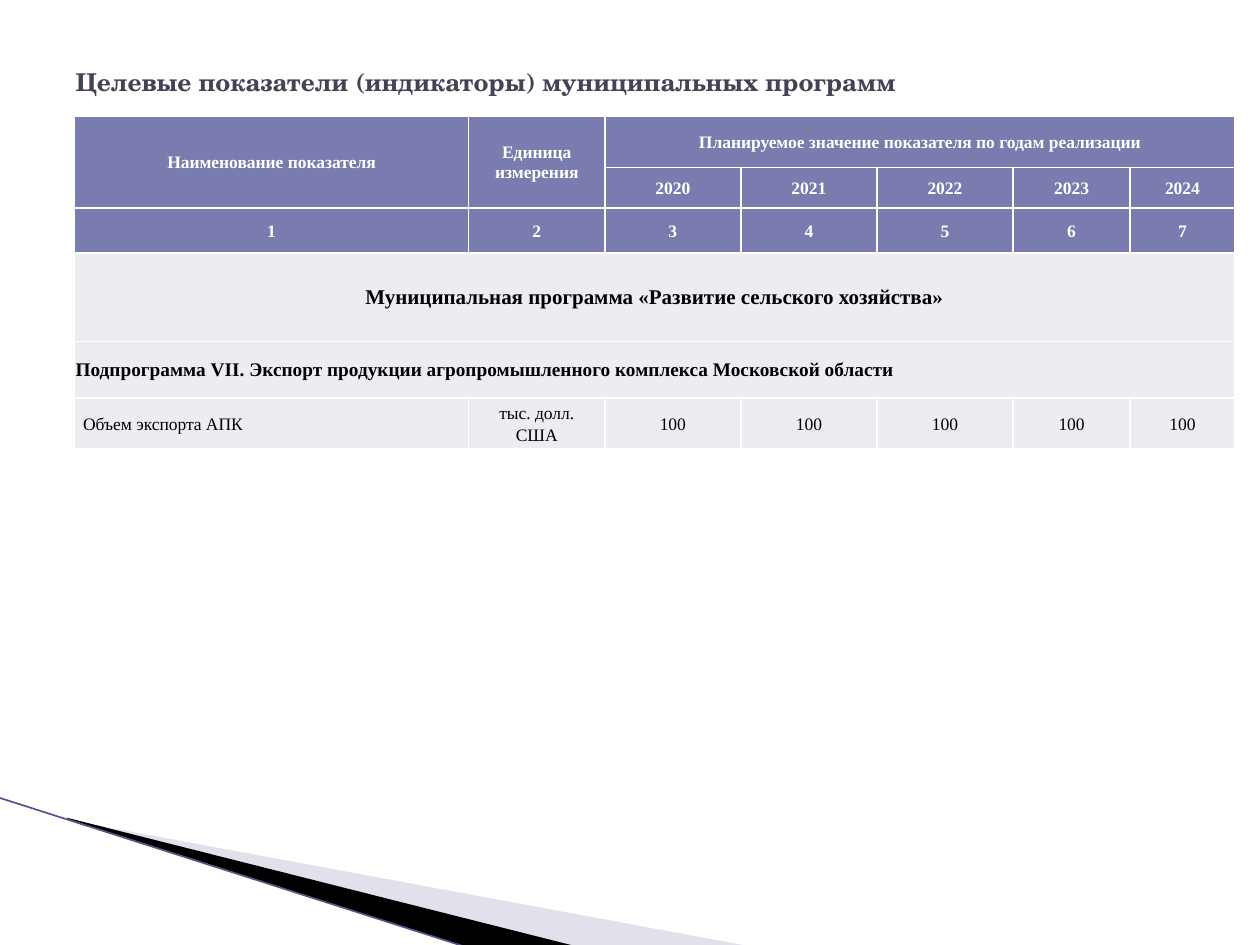
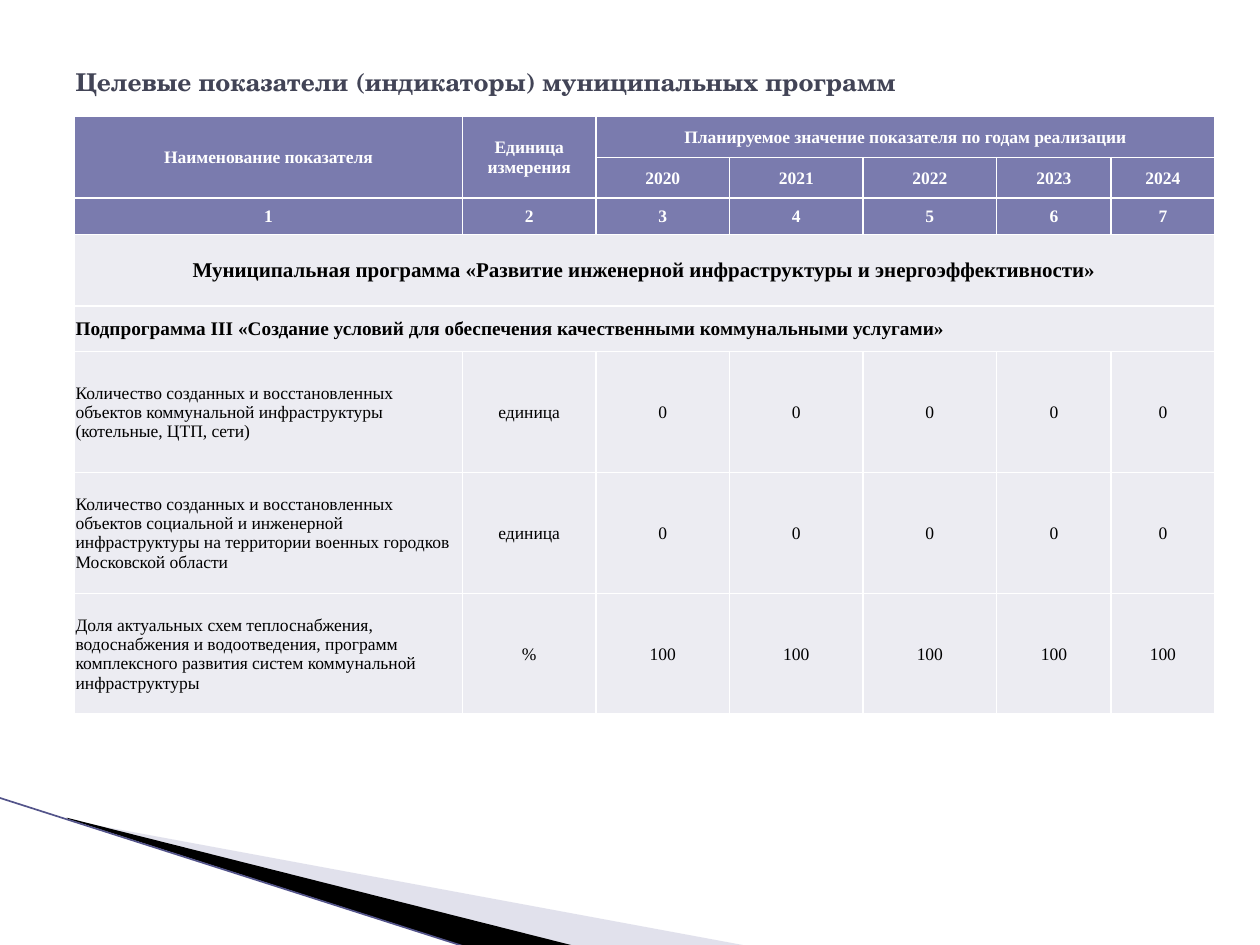
import pptx
import pptx.dml.color
import pptx.enum.shapes
import pptx.enum.text
import pptx.oxml
import pptx.oxml.ns
import pptx.util
from pptx.util import Inches

COLORS = {
    "title": "424456",
    "header": "7A7BAE",
    "header_text": "FFFFFF",
    "body": "ECECF2",
    "body_text": "000000",
    "border": "FFFFFF",
    "pale_wedge": "B6B6D1",
    "dark_wedge": "000000",
    "edge_line": "53548A",
}
TITLE_FONT = "TeX Gyre Schola"
TABLE_FONT = "Times New Roman"
TITLE = "Целевые показатели (индикаторы) муниципальных программ"
YEARS = ["2020", "2021", "2022", "2023", "2024"]
COLUMN_COUNT = 2 + len(YEARS)
HEADER_ROWS = 3
TIGHT_MARGINS = (0.01, 0.01, 0.01, 0)
WIDE_MARGINS = (0.07, 0, 0.07, 0)
LEFT = pptx.enum.text.PP_ALIGN.LEFT
CENTER = pptx.enum.text.PP_ALIGN.CENTER

PROGRAMS = [
    {
        "program": "Муниципальная программа «Развитие сельского хозяйства»",
        "subprogram": "Подпрограмма VII. Экспорт продукции агропромышленного "
                      "комплекса Московской области",
        "indicators": [("Объем экспорта АПК", "тыс. долл. США", "100")],
        "box": (0.59, 0.92, 9.21, 2.64),
        "columns": [3.13, 1.08, 1.08, 1.08, 1.08, 0.93, 0.83],
        "rows": [0.41, 0.32, 0.36, 0.7, 0.45, 0.4],
        "margins": WIDE_MARGINS,
        "line_spacing": 1.15,
    },
    {
        "program": "Муниципальная программа «Развитие инженерной "
                   "инфраструктуры и энергоэффективности»",
        "subprogram": "Подпрограмма III «Создание условий для обеспечения "
                      "качественными коммунальными услугами»",
        "indicators": [
            ("Количество созданных и восстановленных объектов коммунальной "
             "инфраструктуры (котельные, ЦТП, сети)", "единица", "0"),
            ("Количество созданных и восстановленных объектов социальной и "
             "инженерной инфраструктуры на территории военных городков "
             "Московской области", "единица", "0"),
            ("Доля актуальных схем теплоснабжения, водоснабжения и "
             "водоотведения, программ комплексного развития систем "
             "коммунальной инфраструктуры", "%", "100"),
        ],
        "box": (0.59, 0.92, 9.06, 4.75),
        "columns": [3.08, 1.06, 1.06, 1.06, 1.06, 0.91, 0.82],
        "rows": [0.33, 0.32, 0.29, 0.57, 0.36, 0.96, 0.96, 0.96],
        "margins": TIGHT_MARGINS,
        "line_spacing": None,
    },
]


def rgb(name):
    return pptx.dml.color.RGBColor.from_string(COLORS[name])


def add_wedge(slide, points, color):
    corners = [(Inches(x), Inches(y)) for x, y in points]
    builder = slide.shapes.build_freeform(*corners[0], scale=1.0)
    builder.add_line_segments(corners[1:], close=True)
    wedge = builder.convert_to_shape()
    wedge.shadow.inherit = False
    wedge.fill.solid()
    wedge.fill.fore_color.rgb = rgb(color)
    wedge.line.fill.background()
    return wedge


def add_corner_to_master(presentation, slide):
    """Draw the corner wedges on a slide, then move them to its master."""
    pale = add_wedge(
        slide, [(0.55, 6.51), (5.95, 7.51), (4.56, 7.51), (0.55, 6.5)], "pale_wedge")
    color = pale.element.xpath("./p:spPr/a:solidFill/a:srgbClr")[0]
    color.append(pptx.oxml.parse_xml(
        f'<a:alpha {pptx.oxml.ns.nsdecls("a")} val="40000"/>'))
    dark = add_wedge(
        slide, [(0.53, 6.49), (4.57, 7.51), (3.72, 7.52), (0.54, 6.5)], "dark_wedge")

    edge = slide.shapes.add_connector(
        pptx.enum.shapes.MSO_CONNECTOR.STRAIGHT,
        Inches(-0.01), Inches(6.33), Inches(3.71), Inches(7.52))
    edge.line.color.rgb = rgb("edge_line")
    edge.line.width = pptx.util.Pt(0.95)
    edge.element.spPr.append(pptx.oxml.parse_xml(
        f'<a:effectLst {pptx.oxml.ns.nsdecls("a")}/>'))

    for number, shape in enumerate((pale, dark, edge), start=101):
        shape.element.xpath("./*/p:cNvPr")[0].set("id", str(number))
        presentation.slide_master.shapes.element.append(shape.element)


def set_title(slide, box):
    title = slide.shapes.title
    title.left, title.top, title.width, title.height = map(Inches, box)
    title.text_frame.text = TITLE
    title.text_frame.vertical_anchor = pptx.enum.text.MSO_ANCHOR.MIDDLE
    paragraph = title.text_frame.paragraphs[0]
    paragraph.alignment = LEFT
    paragraph.font.name = TITLE_FONT
    paragraph.font.size = pptx.util.Pt(14)
    paragraph.font.bold = True
    paragraph.font.color.rgb = rgb("title")


def style_cell(cell, kind):
    """Give a cell the fill, margins and borders of a header or body cell."""
    cell.fill.solid()
    cell.fill.fore_color.rgb = rgb(kind)
    cell.vertical_anchor = pptx.enum.text.MSO_ANCHOR.MIDDLE
    set_margins(cell, TIGHT_MARGINS)
    properties = cell.fill.fore_color and cell._tc.get_or_add_tcPr()
    for position, side in enumerate("LRTB"):
        properties.insert(position, pptx.oxml.parse_xml(
            f'<a:ln{side} {pptx.oxml.ns.nsdecls("a")} w="12700"><a:solidFill>'
            f'<a:srgbClr val="{COLORS["border"]}"/></a:solidFill></a:ln{side}>'))


def set_margins(cell, margins):
    (cell.margin_left, cell.margin_top,
     cell.margin_right, cell.margin_bottom) = map(Inches, margins)


def write_cell(cell, text, color="body_text", size=10, bold=False, alignment=CENTER):
    cell.text = text
    paragraph = cell.text_frame.paragraphs[0]
    paragraph.alignment = alignment
    paragraph.font.name = TABLE_FONT
    paragraph.font.size = pptx.util.Pt(size)
    paragraph.font.bold = bold
    paragraph.font.color.rgb = rgb(color)
    return paragraph


def fill_header(table):
    table.cell(0, 0).merge(table.cell(1, 0))
    table.cell(0, 1).merge(table.cell(1, 1))
    table.cell(0, 2).merge(table.cell(0, COLUMN_COUNT - 1))
    labels = {
        (0, 0): "Наименование показателя",
        (0, 1): "Единица измерения",
        (0, 2): "Планируемое значение показателя по годам реализации",
    }
    labels.update({(1, 2 + index): year for index, year in enumerate(YEARS)})
    labels.update({(2, index): str(index + 1) for index in range(COLUMN_COUNT)})
    for (row, column), text in labels.items():
        write_cell(table.cell(row, column), text, "header_text", bold=True)


def fill_heading_row(table, row, text, size, alignment):
    table.cell(row, 0).merge(table.cell(row, COLUMN_COUNT - 1))
    write_cell(table.cell(row, 0), text, size=size, bold=True, alignment=alignment)


def fill_indicators(table, program):
    for row, (name, unit, value) in enumerate(program["indicators"], HEADER_ROWS + 2):
        for column, text in enumerate([name, unit] + [value] * len(YEARS)):
            cell = table.cell(row, column)
            set_margins(cell, program["margins"])
            paragraph = write_cell(cell, text, alignment=CENTER if column else LEFT)
            paragraph.line_spacing = program["line_spacing"]


def add_indicator_table(slide, program, box):
    table = slide.shapes.add_table(
        len(program["rows"]), COLUMN_COUNT, *map(Inches, box)).table
    table.horz_banding = False
    for column, width in zip(table.columns, program["columns"]):
        column.width = Inches(width)
    for index, height in enumerate(program["rows"]):
        table.rows[index].height = Inches(height)
        for cell in table.rows[index].cells:
            style_cell(cell, "header" if index < HEADER_ROWS else "body")
    fill_header(table)
    fill_heading_row(table, HEADER_ROWS, program["program"], 12, CENTER)
    fill_heading_row(table, HEADER_ROWS + 1, program["subprogram"], 11, LEFT)
    fill_indicators(table, program)


def add_program_slide(presentation, program):
    slide = presentation.slides.add_slide(presentation.slide_layouts[5])
    set_title(slide, (0.5, 0.3, 9, 0.69))
    add_indicator_table(slide, program, program["box"])
    return slide


def main():
    presentation = pptx.Presentation()
    presentation.slide_width = Inches(10)
    presentation.slide_height = Inches(7.5)
    slides = [add_program_slide(presentation, program) for program in PROGRAMS]
    add_corner_to_master(presentation, slides[0])
    presentation.save("out.pptx")


if __name__ == "__main__":
    main()
